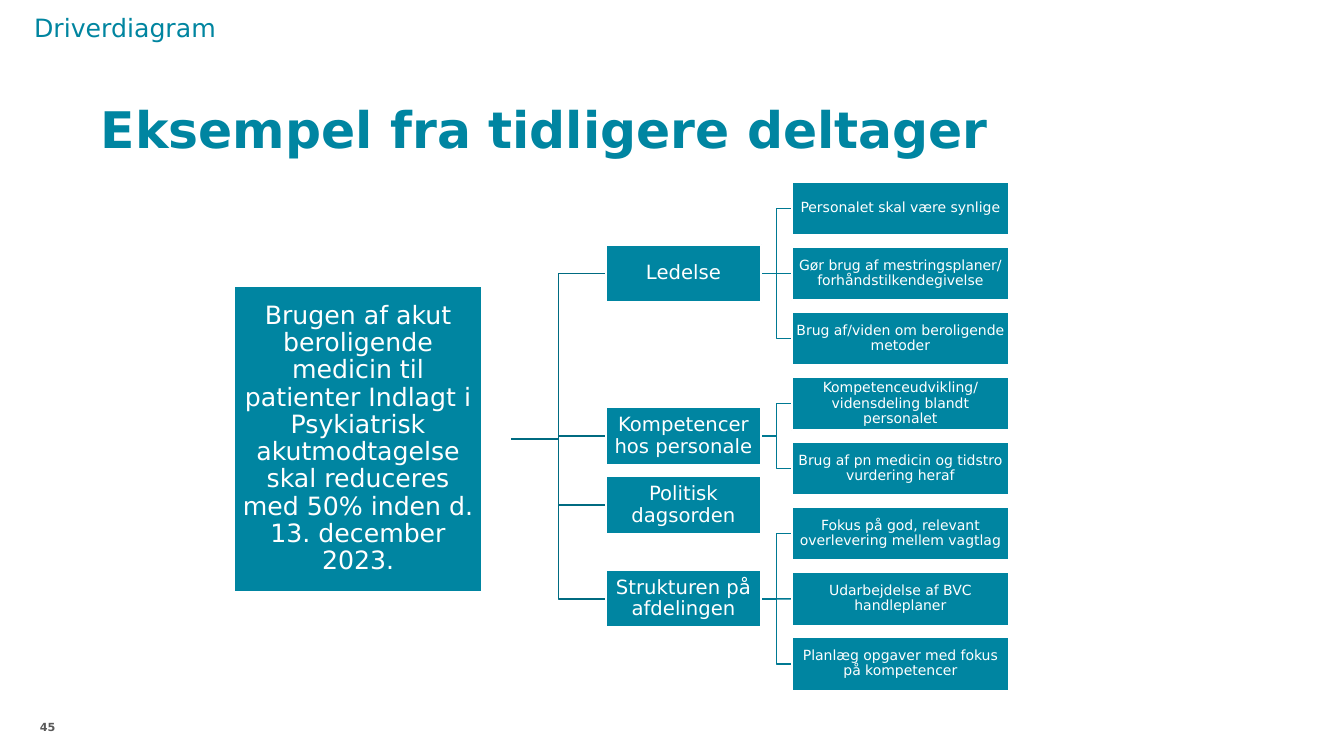
from copy import deepcopy

from lxml.etree import SubElement
from pptx import Presentation
from pptx.dml.color import RGBColor
from pptx.enum.shapes import MSO_CONNECTOR, MSO_SHAPE
from pptx.enum.text import MSO_ANCHOR, PP_ALIGN
from pptx.oxml.ns import qn
from pptx.util import Cm, Pt

TEAL = RGBColor(0x00, 0x85, 0xA1)
HEADER_TEAL = RGBColor(0x00, 0x85, 0xA0)
AIM_LINE = RGBColor(0x00, 0x6B, 0x81)
DRIVER_LINE = RGBColor(0x00, 0x79, 0x92)
GRAY = RGBColor(0x59, 0x59, 0x59)
WHITE = RGBColor(0xFF, 0xFF, 0xFF)
FONT = "DejaVu Sans"

# Columns of the diagram, in centimetres
AIM_LEFT, AIM_WIDTH, AIM_HEIGHT, AIM_MIDDLE = 5.89, 6.27, 7.7, 11.06
AIM_LINE_START = 12.88
DRIVER_LEFT, DRIVER_WIDTH, DRIVER_HEIGHT = 15.27, 3.91, 1.45
ACTION_LEFT, ACTION_WIDTH, ACTION_HEIGHT = 19.96, 5.46, 1.35
FIRST_ACTION_MIDDLE, ACTION_STEP = 5.25, 1.64
LONE_DRIVER_MIDDLE = 12.73

AIM = ("Brugen af akut beroligende medicin til patienter Indlagt i Psykiatrisk "
       "akutmodtagelse skal reduceres med 50% inden d. 13. december 2023.")
DRIVERS = [
    ("Ledelse", [
        "Personalet skal være synlige",
        "Gør brug af mestringsplaner/\nforhåndstilkendegivelse",
        "Brug af/viden om beroligende metoder"]),
    ("Kompetencer hos personale", [
        "Kompetenceudvikling/\nvidensdeling blandt personalet",
        "Brug af pn medicin og tidstro vurdering heraf"]),
    ("Politisk dagsorden", []),
    ("Strukturen på afdelingen", [
        "Fokus på god, relevant overlevering mellem vagtlag",
        "Udarbejdelse af BVC handleplaner",
        "Planlæg opgaver med fokus på kompetencer"]),
]


def write_text(shape, text, size, color=WHITE, bold=False, align=PP_ALIGN.LEFT,
               anchor=MSO_ANCHOR.TOP, margins=(0, 0), line_spacing=1.0):
    """Fill a shape with one formatted paragraph; margins are (side, top)."""
    frame = shape.text_frame
    frame.word_wrap = True
    frame.vertical_anchor = anchor
    frame.margin_left = frame.margin_right = Cm(margins[0])
    frame.margin_top = frame.margin_bottom = Cm(margins[1])
    paragraph = frame.paragraphs[0]
    paragraph.text = text
    paragraph.alignment = align
    paragraph.line_spacing = line_spacing
    for run in paragraph.runs:
        run.font.name = FONT
        run.font.size = Pt(size)
        run.font.bold = bold
        run.font.color.rgb = color
    # Line breaks take the same character format as the runs
    for line_break in paragraph._p.findall(qn("a:br")):
        line_break.append(deepcopy(paragraph.runs[0]._r.rPr))


def add_text(slide, text, left, top, width, height, **text_format):
    box = slide.shapes.add_textbox(Cm(left), Cm(top), Cm(width), Cm(height))
    write_text(box, text, **text_format)


def add_box(slide, text, left, middle, width, height, size):
    """Add a teal diagram box centred vertically on middle."""
    shape = slide.shapes.add_shape(MSO_SHAPE.RECTANGLE, Cm(left), Cm(middle - height / 2),
                                   Cm(width), Cm(height))
    shape.shadow.inherit = False
    shape.fill.solid()
    shape.fill.fore_color.rgb = TEAL
    shape.line.color.rgb = WHITE
    shape.line.width = Pt(1.5)
    write_text(shape, text, size, align=PP_ALIGN.CENTER, anchor=MSO_ANCHOR.MIDDLE,
               margins=(0.03, 0.03), line_spacing=0.9)


def add_branch(slide, start, end, color):
    """Join two points with a line that bends halfway when their heights differ."""
    (x1, y1), (x2, y2) = start, end
    if abs(y1 - y2) < 0.01:
        line = slide.shapes.add_connector(MSO_CONNECTOR.STRAIGHT, Cm(x1), Cm(y1), Cm(x2), Cm(y2))
        SubElement(line._element.spPr, qn("a:effectLst"))
    else:
        bend = (x1 + x2) / 2
        builder = slide.shapes.build_freeform(Cm(x1), Cm(y1))
        builder.add_line_segments([(Cm(bend), Cm(y1)), (Cm(bend), Cm(y2)), (Cm(x2), Cm(y2))],
                                  close=False)
        line = builder.convert_to_shape()
        line.shadow.inherit = False
        line.fill.background()
    line.line.color.rgb = color
    line.line.width = Pt(1)


def add_driver_diagram(slide):
    # Each driver sits at the middle of its own actions
    action_middle = FIRST_ACTION_MIDDLE
    add_box(slide, AIM, AIM_LEFT, AIM_MIDDLE, AIM_WIDTH, AIM_HEIGHT, 18)
    for driver, actions in DRIVERS:
        middles = [action_middle + ACTION_STEP * index for index in range(len(actions))]
        action_middle += ACTION_STEP * len(actions)
        driver_middle = sum(middles) / len(middles) if middles else LONE_DRIVER_MIDDLE

        add_branch(slide, (AIM_LINE_START, AIM_MIDDLE), (DRIVER_LEFT, driver_middle), AIM_LINE)
        for middle in middles:
            add_branch(slide, (DRIVER_LEFT + DRIVER_WIDTH, driver_middle),
                       (ACTION_LEFT, middle), DRIVER_LINE)
        add_box(slide, driver, DRIVER_LEFT, driver_middle, DRIVER_WIDTH, DRIVER_HEIGHT, 14)
        for action, middle in zip(actions, middles):
            add_box(slide, action, ACTION_LEFT, middle, ACTION_WIDTH, ACTION_HEIGHT, 10)


def main():
    presentation = Presentation()
    presentation.slide_width = Cm(33.87)
    presentation.slide_height = Cm(19.05)
    slide = presentation.slides.add_slide(presentation.slide_layouts[6])

    # Title and slide number
    add_text(slide, "Eksempel fra tidligere deltager", 2.54, 1.02, 26.8, 3,
             size=36, color=TEAL, bold=True, anchor=MSO_ANCHOR.BOTTOM, line_spacing=0.9)
    add_text(slide, "45", 0.41, 18.16, 0.99, 0.89,
             size=8, color=GRAY, bold=True, align=PP_ALIGN.RIGHT)

    # Diagram
    add_driver_diagram(slide)

    # Section header
    add_text(slide, "Driverdiagram", 0.61, 0.18, 16.94, 1.02,
             size=18, color=HEADER_TEAL, margins=(0.25, 0.13))

    presentation.save("out.pptx")


if __name__ == "__main__":
    main()
